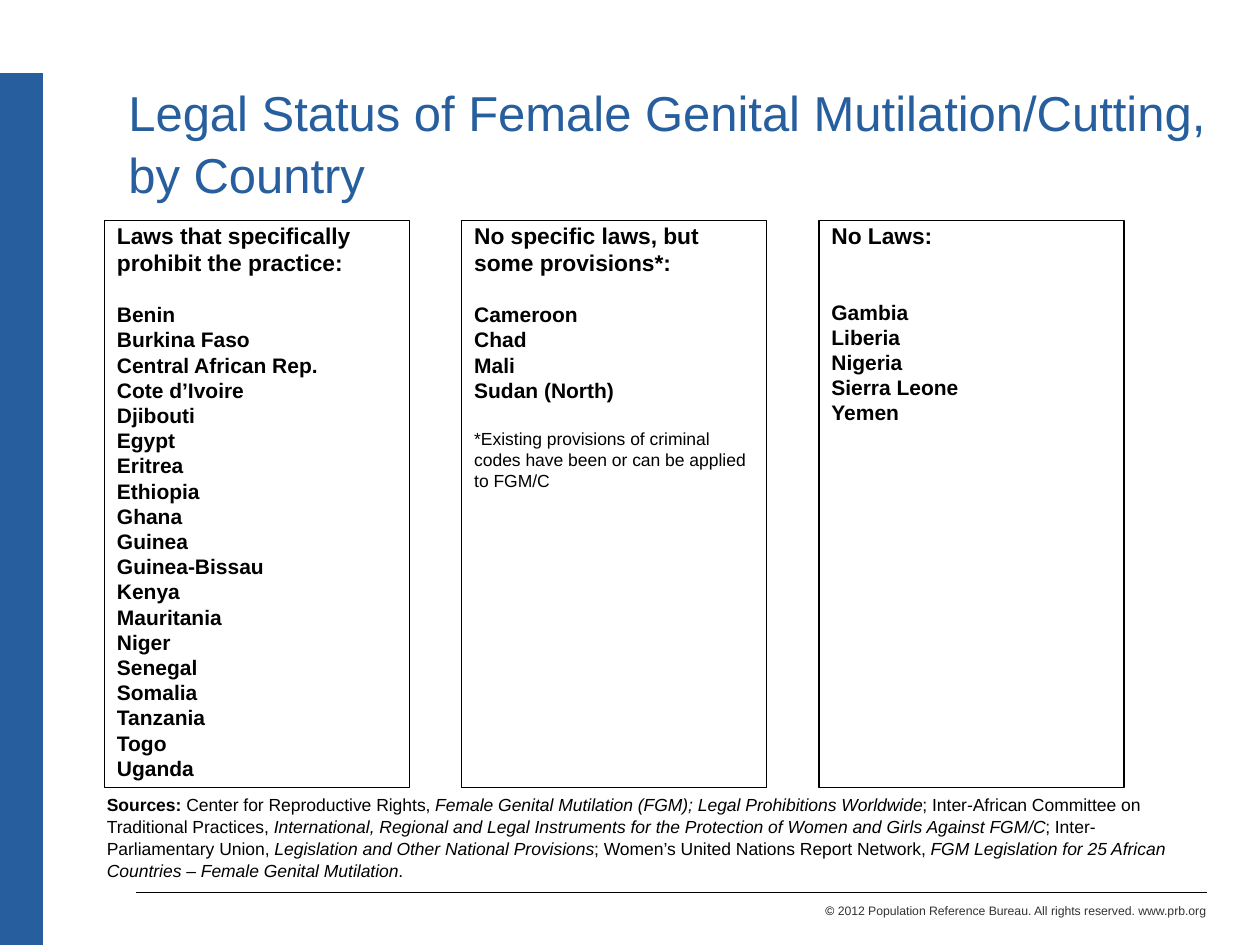
import pptx
import pptx.dml.color
import pptx.enum.shapes
import pptx.enum.text
import pptx.oxml.ns
import pptx.util
from lxml import etree
from pptx.util import Inches

BLUE = pptx.dml.color.RGBColor(0x26, 0x5E, 0x9E)
BLACK = pptx.dml.color.RGBColor(0, 0, 0)
GRAY = pptx.dml.color.RGBColor(0x33, 0x33, 0x33)

COLUMN_LEFT, COLUMN_PITCH = 0.83, 2.835

# Heading lines, countries, space above the countries (points), note lines
COLUMNS = [
    (["Laws that specifically", "prohibit the practice:"],
     ["Benin", "Burkina Faso", "Central African Rep.", "Cote d’Ivoire",
      "Djibouti", "Egypt", "Eritrea", "Ethiopia", "Ghana", "Guinea",
      "Guinea-Bissau", "Kenya", "Mauritania", "Niger", "Senegal", "Somalia",
      "Tanzania", "Togo", "Uganda"], 17.8, []),
    (["No specific laws, but", "some provisions*:"],
     ["Cameroon", "Chad", "Mali", "Sudan (North)"], 17.8,
     ["*Existing provisions of criminal", "codes have been or can be applied",
      "to FGM/C"]),
    (["No Laws:"],
     ["Gambia", "Liberia", "Nigeria", "Sierra Leone", "Yemen"], 31.7, []),
]

SOURCES = [
    ("Center for Reproductive Rights, ",
     "Female Genital Mutilation (FGM); Legal Prohibitions Worldwide"),
    ("; Inter-African Committee on Traditional Practices, ",
     "International, Regional and Legal Instruments for the Protection of "
     "Women and Girls Against FGM/C"),
    ("; Inter-Parliamentary Union, ",
     "Legislation and Other National Provisions"),
    ("; Women’s United Nations Report Network, ",
     "FGM Legislation for 25 African Countries – Female Genital Mutilation"),
]


def style(font, size, color=BLACK, bold=False, italic=False):
    font.name = "Arial"
    font.size = pptx.util.Pt(size)
    font.color.rgb = color
    font.bold = bold
    font.italic = italic


def add_run(paragraph, text, size, **look):
    run = paragraph.add_run()
    run.text = text
    style(run.font, size, **look)


def add_line(slide, start, end, color, width):
    line = slide.shapes.add_connector(
        pptx.enum.shapes.MSO_CONNECTOR.STRAIGHT,
        *(Inches(value) for value in start + end))
    line.line.color.rgb = color
    line.line.width = pptx.util.Pt(width)
    etree.SubElement(line._element.spPr, pptx.oxml.ns.qn("a:effectLst"))


def add_text_box(slide, left, top, width, height):
    """Add a wrapping text box and return its text frame."""
    box = slide.shapes.add_textbox(
        Inches(left), Inches(top), Inches(width), Inches(height))
    box.text_frame.word_wrap = True
    return box.text_frame


def add_title(slide):
    text_frame = add_text_box(slide, 0.92, 0.58, 8.75, 1.08)
    text_frame.vertical_anchor = pptx.enum.text.MSO_ANCHOR.MIDDLE
    text_frame.text = ("Legal Status of Female Genital Mutilation/Cutting, "
                       "by Country")
    paragraph = text_frame.paragraphs[0]
    paragraph.line_spacing = 1.06
    style(paragraph.runs[0].font, 28, BLUE)


def add_column(slide, left, heading, countries, country_gap, note):
    """Draw a framed list; each group sets its size and space above."""
    frame = slide.shapes.add_shape(
        pptx.enum.shapes.MSO_SHAPE.RECTANGLE,
        Inches(left), Inches(1.75), Inches(2.42), Inches(4.5))
    frame.shadow.inherit = False
    frame.fill.background()
    frame.line.color.rgb = BLACK
    frame.line.width = pptx.util.Pt(0.75)
    text_frame = frame.text_frame
    text_frame.vertical_anchor = pptx.enum.text.MSO_ANCHOR.TOP
    text_frame.text = "\n".join(heading + countries + note)

    groups = [(heading, 13, True, 0, 2.9),
              (countries, 12, True, country_gap, 2.9),
              (note, 10, False, 17.2, 2.3)]
    paragraphs = iter(text_frame.paragraphs)
    for lines, size, bold, first_gap, gap in groups:
        for index in range(len(lines)):
            paragraph = next(paragraphs)
            paragraph.alignment = pptx.enum.text.PP_ALIGN.LEFT
            paragraph.line_spacing = 0.8
            paragraph.space_before = pptx.util.Pt(gap if index else first_gap)
            style(paragraph.runs[0].font, size, bold=bold)


def add_sources(slide):
    paragraph = add_text_box(slide, 0.75, 6.25, 8.83, 0.77).paragraphs[0]
    paragraph.line_spacing = 1.04
    add_run(paragraph, "Sources: ", 10, bold=True)
    for publisher, work in SOURCES:
        add_run(paragraph, publisher, 10)
        add_run(paragraph, work, 10, italic=True)
    add_run(paragraph, ".", 10)


def add_footer(slide):
    add_line(slide, (9.58, 7.08), (1.08, 7.08), BLACK, 0.5)
    paragraph = add_text_box(slide, 4.25, 7.12, 5.42, 0.22).paragraphs[0]
    paragraph.alignment = pptx.enum.text.PP_ALIGN.RIGHT
    add_run(paragraph, "© ", 7)
    add_run(paragraph, "2012 Population Reference Bureau. All rights reserved. "
            "www.prb.org", 7, color=GRAY)


def main():
    presentation = pptx.Presentation()
    presentation.slide_width = Inches(10)
    presentation.slide_height = Inches(7.5)
    slide = presentation.slides.add_slide(presentation.slide_layouts[6])

    add_line(slide, (0.17, 0.58), (0.17, 7.5), BLUE, 25)
    add_footer(slide)
    add_title(slide)
    for index, column in enumerate(COLUMNS):
        add_column(slide, COLUMN_LEFT + index * COLUMN_PITCH, *column)
    add_sources(slide)
    presentation.save("out.pptx")


if __name__ == "__main__":
    main()
